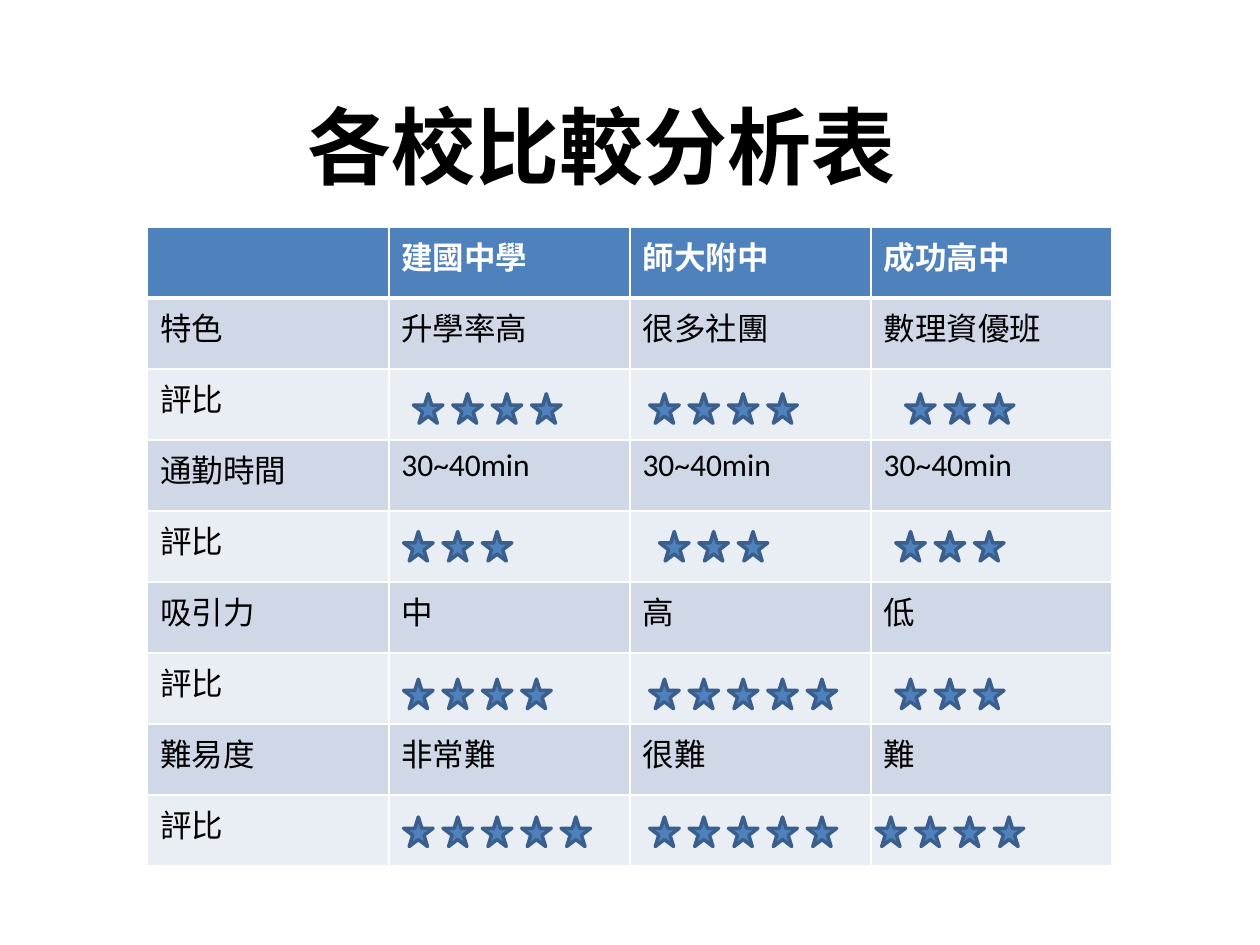
from lxml import etree
from pptx import Presentation
from pptx import util as u
from pptx.dml.color import RGBColor
from pptx.enum import shapes, text
from pptx.oxml import ns

COLORS = {
    "header": "4F81BD",
    "feature": "D0D8E8",
    "rating": "E9EDF4",
    "border": "FFFFFF",
    "header_text": "FFFFFF",
    "text": "000000",
    "star": "4F81BD",
    "star_line": "3A5F8C",
}
COL_WIDTH, ROW_HEIGHT = 137.8, 40.6
STAR_SIZE, STAR_STEP = 16.88, 22.5

COMPARISON = [
    ["", "建國中學", "師大附中", "成功高中"],
    ["特色", "升學率高", "很多社團", "數理資優班"],
    ["評比", "", "", ""],
    ["通勤時間", "30~40min", "30~40min", "30~40min"],
    ["評比", "", "", ""],
    ["吸引力", "中", "高", "低"],
    ["評比", "", "", ""],
    ["難易度", "非常難", "很難", "難"],
    ["評比", "", "", ""],
]
# Top of each rating row, then (left, number of stars) for each school
RATINGS = [
    (225, [(236.25, 4), (371.25, 4), (517.5, 3)]),
    (303.75, [(230.63, 3), (376.88, 3), (511.88, 3)]),
    (388.13, [(230.63, 4), (371.25, 5), (511.88, 3)]),
    (466.88, [(230.63, 5), (371.25, 5), (500.63, 4)]),
]


def style_text(paragraph, color, formats):
    paragraph.font.color.rgb = RGBColor.from_string(COLORS[color])
    for run in paragraph.runs:
        run.font.color.rgb = RGBColor.from_string(COLORS[color])
        for name, value in formats.items():
            setattr(run.font, name, value)
    paragraph.font.size = formats["size"]


def add_border(cell, side, width):
    line = etree.SubElement(cell._tc.get_or_add_tcPr(), ns.qn(f"a:ln{side}"), w=str(u.Pt(width)))
    fill = etree.SubElement(line, ns.qn("a:solidFill"))
    etree.SubElement(fill, ns.qn("a:srgbClr"), val=COLORS["border"])


deck = Presentation()
deck.slide_width, deck.slide_height = u.Pt(720), u.Pt(540)
slide = deck.slides.add_slide(deck.slide_layouts[6])

# Comparison table
table = slide.shapes.add_table(
    len(COMPARISON), len(COMPARISON[0]), u.Pt(84.4), u.Pt(129.6),
    u.Pt(COL_WIDTH * len(COMPARISON[0])), u.Pt(ROW_HEIGHT * len(COMPARISON)),
).table
for column in table.columns:
    column.width = u.Pt(COL_WIDTH)
for row, entries in enumerate(COMPARISON):
    table.rows[row].height = u.Pt(ROW_HEIGHT)
    band = "header" if row == 0 else "feature" if row % 2 else "rating"
    for col, entry in enumerate(entries):
        cell = table.cell(row, col)
        widths = {"L": 1, "R": 1, "T": 3 if row == 1 else 1, "B": 3 if row == 0 else 1}
        for side, width in widths.items():
            add_border(cell, side, width)
        cell.fill.solid()
        cell.fill.fore_color.rgb = RGBColor.from_string(COLORS[band])
        if entry:
            cell.text = entry
        style_text(
            cell.text_frame.paragraphs[0],
            "header_text" if row == 0 else "text",
            {"size": u.Pt(18), "name": "Calibri", "bold": row == 0},
        )

# Title
title = slide.shapes.add_textbox(u.Pt(168.5), u.Pt(50.4), u.Pt(353.5), u.Pt(65.5)).text_frame
title.word_wrap = False
title.auto_size = text.MSO_AUTO_SIZE.SHAPE_TO_FIT_TEXT
title.text = "各校比較分析表"
style_text(
    title.paragraphs[0], "text",
    {"size": u.Pt(48), "name": "Noto Sans CJK SC", "bold": True},
)

# Star ratings
for top, schools in RATINGS:
    for left, count in schools:
        for position in range(count):
            star = slide.shapes.add_shape(
                shapes.MSO_SHAPE.STAR_5_POINT, u.Pt(left + position * STAR_STEP),
                u.Pt(top), u.Pt(STAR_SIZE), u.Pt(STAR_SIZE),
            )
            star.shadow.inherit = False
            star.fill.solid()
            star.fill.fore_color.rgb = RGBColor.from_string(COLORS["star"])
            star.line.color.rgb = RGBColor.from_string(COLORS["star_line"])
            star.line.width = u.Pt(2)

deck.save("out.pptx")
